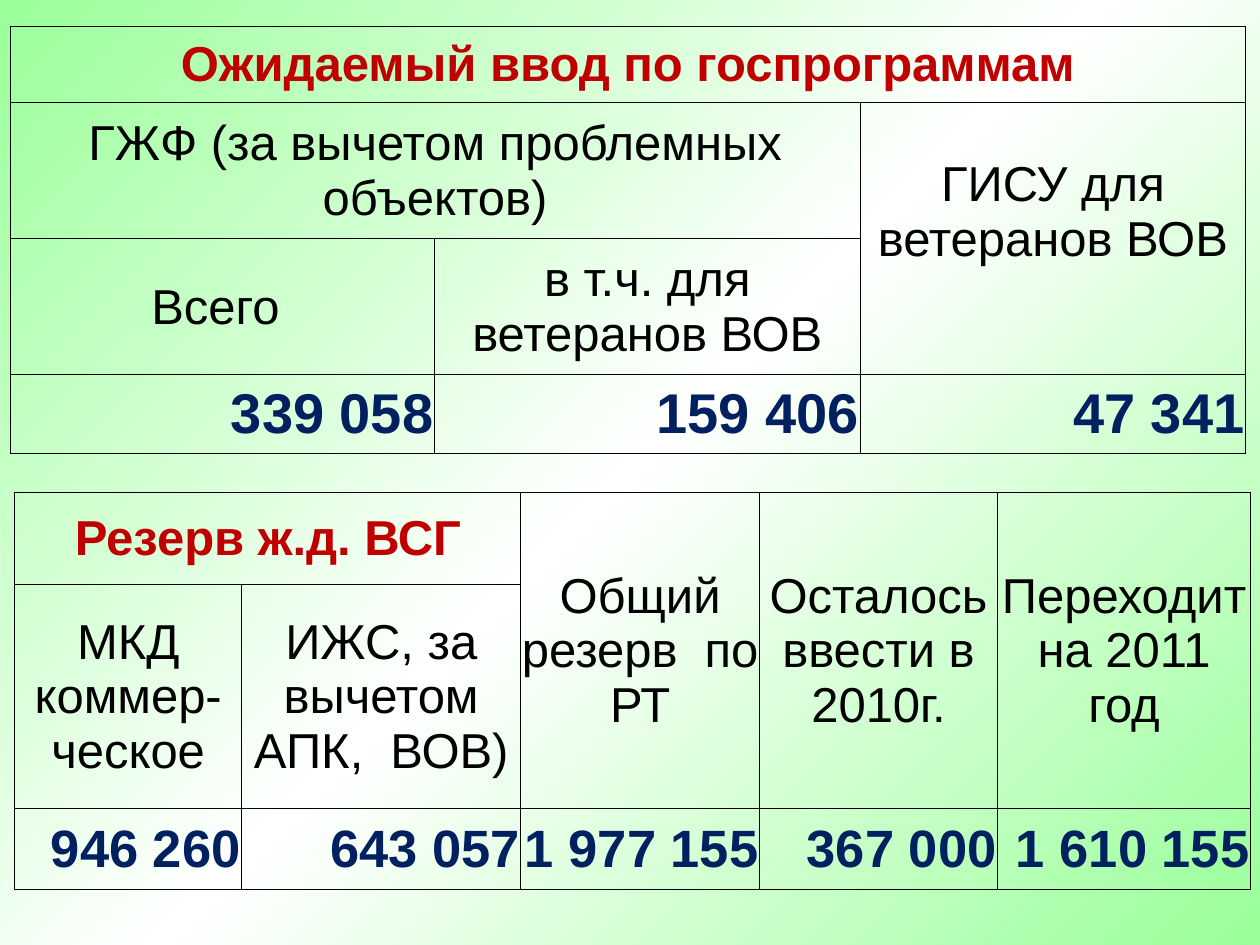
from copy import deepcopy
from dataclasses import dataclass

from lxml.etree import SubElement
from pptx import Presentation
from pptx.dml.color import RGBColor as RGB
from pptx.enum.text import MSO_ANCHOR, PP_ALIGN
from pptx.oxml.ns import qn
from pptx.util import Cm, Pt

CENTER, RIGHT = PP_ALIGN.CENTER, PP_ALIGN.RIGHT


@dataclass(frozen=True)
class Theme:
    font: str = "Arial"
    heading: str = "C00000"
    label: str = "000000"
    value: str = "002060"
    border: str = "000000"
    border_pt: float = 0.5
    label_pt: int = 28
    background: tuple = ((0, "99FF99"), (0.5, "FFFFFF"), (1, "99FF99"))


def write_text(tf, text, *, font, size, color, bold=False, align=CENTER):
    """Fill the first paragraph; a \\v in the text becomes a line break."""
    p = tf.paragraphs[0]
    p.text = text
    p.alignment = align
    for r in p.runs:
        f = r.font
        f.name, f.size, f.bold = font, Pt(size), bold
        f.color.rgb = RGB.from_string(color)
    # Breaks and the paragraph end take the run format, so empty lines keep its height
    run_format = p.runs[0].font._element
    for br in p._p.findall(qn("a:br")):
        br.append(deepcopy(run_format))
    end = SubElement(p._p, qn("a:endParaRPr"))
    end.set("sz", str(size * 100))


class SlideBuilder:
    def __init__(self, slide, theme):
        self.s = slide
        self.theme = theme

    def background(self):
        fill = self.s.background.fill
        fill.gradient()
        fill.gradient_angle = 315
        stops = self.s.element.find(".//" + qn("a:gsLst"))
        while len(stops) < len(self.theme.background):
            stops.append(deepcopy(stops[0]))
        for stop, (position, color) in zip(fill.gradient_stops, self.theme.background):
            stop.position = position
            stop.color.rgb = RGB.from_string(color)

    def border(self, cell):
        tc_pr = cell._tc.get_or_add_tcPr()
        for side in ("lnL", "lnR", "lnT", "lnB"):
            ln = SubElement(tc_pr, qn("a:" + side), w=str(Pt(self.theme.border_pt)))
            solid = SubElement(ln, qn("a:solidFill"))
            SubElement(solid, qn("a:srgbClr"), val=self.theme.border)

    def table(self, left, top, widths, heights, heading, labels, values, value_pt):
        """Build a table from (row, column, row span, column span, text) labels."""
        t = self.theme
        frame = self.s.shapes.add_table(len(heights), len(widths), Cm(left), Cm(top),
                                        Cm(sum(widths)), Cm(sum(heights)))
        table = frame.table
        table.first_row = table.horz_banding = False
        for column, width in zip(table.columns, widths):
            column.width = Cm(width)
        for row, height in zip(table.rows, heights):
            row.height = Cm(height)
        for cell in table.iter_cells():
            cell.margin_left = cell.margin_right = cell.margin_top = Cm(0.02)
            cell.margin_bottom = 0
            cell.vertical_anchor = MSO_ANCHOR.MIDDLE
            self.border(cell)
            cell.fill.background()

        def put(row, col, rows, cols, text, **style):
            cell = table.cell(row, col)
            if rows * cols > 1:
                cell.merge(table.cell(row + rows - 1, col + cols - 1))
            write_text(cell.text_frame, text, font=t.font, **style)

        put(*heading, size=t.label_pt, color=t.heading, bold=True)
        for label in labels:
            put(*label, size=t.label_pt, color=t.label)
        for col, value in enumerate(values):
            put(len(heights) - 1, col, 1, 1, value, size=value_pt, color=t.value,
                bold=True, align=RIGHT)


def main():
    prs = Presentation()
    prs.slide_width, prs.slide_height = Cm(25.4), Cm(19.05)
    slide = SlideBuilder(prs.slides.add_slide(prs.slide_layouts[6]), Theme())
    slide.background()

    slide.table(
        0.2, 0.53, [8.56, 8.58, 7.77], [1.54, 2.74, 2.74, 1.58],
        heading=(0, 0, 1, 3, "Ожидаемый ввод по госпрограммам"),
        labels=[
            (1, 0, 1, 2, "ГЖФ (за вычетом проблемных объектов)"),
            (1, 2, 2, 1, "ГИСУ для ветеранов ВОВ\v"),
            (2, 0, 1, 1, "Всего "),
            (2, 1, 1, 1, "в т.ч. для ветеранов ВОВ"),
        ],
        values=["339 058", "159 406", "47 341"], value_pt=32,
    )
    slide.table(
        0.3, 9.93, [4.57, 5.63, 4.81, 4.8, 5.1], [1.85, 4.51, 1.64],
        heading=(0, 0, 1, 2, "Резерв ж.д. ВСГ"),
        labels=[
            (0, 2, 2, 1, "Общий резерв  по РТ"),
            (0, 3, 2, 1, "Осталось ввести в 2010г."),
            (0, 4, 2, 1, "Переходит на 2011 год"),
            (1, 0, 1, 1, "МКД коммер-ческое"),
            (1, 1, 1, 1, "ИЖС, за вычетом АПК,  ВОВ)"),
        ],
        values=["946 260", "643 057", "1 977 155", "367 000", "1 610 155"], value_pt=30,
    )
    prs.save("out.pptx")


if __name__ == "__main__":
    main()
